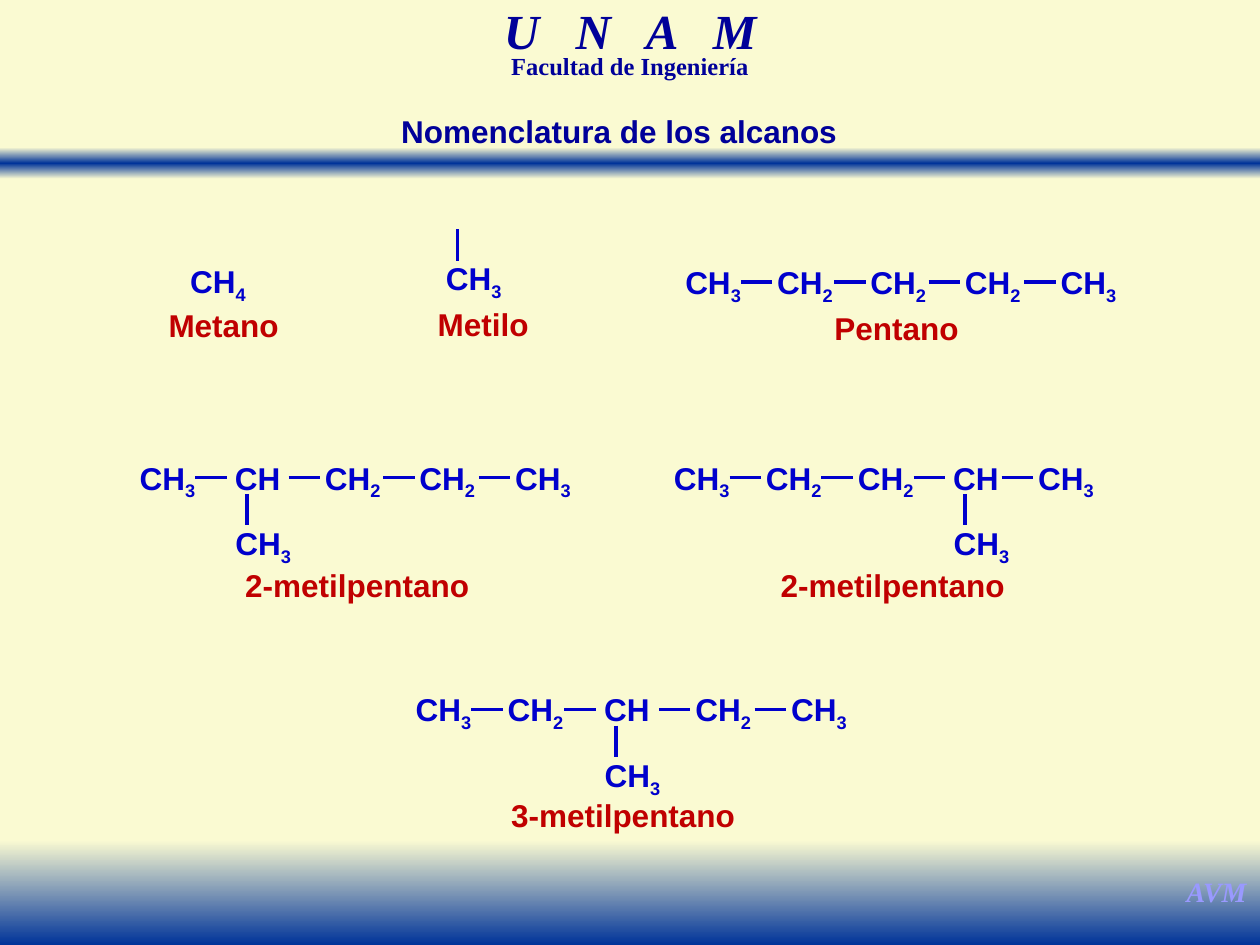
from copy import deepcopy

from lxml import etree
from pptx import Presentation
from pptx.dml.color import RGBColor
from pptx.enum.shapes import MSO_CONNECTOR, MSO_SHAPE
from pptx.enum.text import PP_ALIGN
from pptx.oxml.ns import qn
from pptx.util import Inches, Pt

RECTANGLE = MSO_SHAPE.RECTANGLE
STRAIGHT = MSO_CONNECTOR.STRAIGHT
CENTER = PP_ALIGN.CENTER

COLORS = {"cream": "FAFAD2", "blue": "003399", "navy": "000099",
          "formula": "0000CC", "name": "C00000", "initials": "9999FF"}
SERIF = "Times New Roman"
SANS = "Arial"

BANDS = [
    (1.17, 0.25, ["cream", "blue", "cream"]),
    (6.67, 0.83, ["cream", "blue"]),
]
NAMES = [
    ("Metano", 1.15, 2.39, 1.25),
    ("Metilo", 3.21, 2.38, 1.25),
    ("Pentano", 6.49, 2.41, 1.25),
    ("2-metilpentano", 1.88, 4.45, 1.91),
    ("2-metilpentano", 6.13, 4.45, 1.91),
    ("3-metilpentano", 3.99, 6.28, 1.91),
]
EVEN_BONDS = (0.55, 1.29, 2.04, 2.80)
TIGHT_BONDS = (0.55, 1.28, 2.01, 2.71)
CHAINS = [
    (5.33, 2.04, ["CH3", "CH2", "CH2", "CH2", "CH3"], EVEN_BONDS),
    (1.00, 3.59, ["CH3", "CH", "CH2", "CH2", "CH3"], EVEN_BONDS),
    (5.24, 3.59, ["CH3", "CH2", "CH2", "CH", "CH3"], TIGHT_BONDS),
    (3.19, 5.43, ["CH3", "CH2", "CH", "CH2", "CH3"], EVEN_BONDS),
]
BOND = 0.25
BOND_TO_GROUP = 0.18
BRANCH_DROP = 0.52

prs = Presentation()
prs.slide_width, prs.slide_height = Inches(10), Inches(7.5)
slide = prs.slides.add_slide(prs.slide_layouts[6])
slide.background.fill.solid()
slide.background.fill.fore_color.rgb = RGBColor.from_string(COLORS["cream"])


def add_text(text, left, top, width, height, size=18, font=SANS, color="formula",
             italic=False, wrap=False, insets=(0.1, 0.05, 0.1, 0.05), spacing=None):
    box = slide.shapes.add_textbox(*map(Inches, (left, top, width, height)))
    frame = box.text_frame
    frame.word_wrap = wrap
    (frame.margin_left, frame.margin_top,
     frame.margin_right, frame.margin_bottom) = map(Inches, insets)
    paragraph = frame.paragraphs[0]
    paragraph.alignment = CENTER
    paragraph.line_spacing = spacing
    runs = [(text, {})] if isinstance(text, str) else text
    for part, attributes in runs:
        run = paragraph.add_run()
        run.text = part
        run.font.size, run.font.name = Pt(size), font
        run.font.bold, run.font.italic = True, italic
        run.font.color.rgb = RGBColor.from_string(COLORS[color])
        for key, value in attributes.items():
            run._r.get_or_add_rPr().set(key, value)


def add_band(top, height, stops):
    band = slide.shapes.add_shape(RECTANGLE, 0, Inches(top), prs.slide_width, Inches(height))
    band.shadow.inherit = False
    band.line.fill.background()
    band.fill.gradient()
    band.fill.gradient_angle = 270
    stop_list = band._element.spPr.find(".//" + qn("a:gsLst"))
    while len(stop_list) < len(stops):
        stop_list.append(deepcopy(stop_list[0]))
    for i, (stop, color) in enumerate(zip(band.fill.gradient_stops, stops)):
        stop.position = i / (len(stops) - 1)
        stop.color.rgb = RGBColor.from_string(COLORS[color])


def add_bond(x1, y1, x2, y2):
    bond = slide.shapes.add_connector(STRAIGHT, *map(Inches, (x1, y1, x2, y2)))
    bond.line.color.rgb = RGBColor.from_string(COLORS["formula"])
    bond.line.width = Pt(2)
    etree.SubElement(bond._element.spPr, qn("a:effectLst"))


def add_group(formula, left, top):
    runs = [("CH", {})]
    if formula != "CH":
        runs.append((formula[2:], {"baseline": "-25000"}))
    add_text(runs, left, top, 0.66 if formula != "CH" else 0.57, 0.4)


def add_methyl(left, top):
    add_group("CH3", left, top)
    add_bond(left + 0.2, top - 0.19, left + 0.2, top - 0.19 + BOND)


def add_chain(left, top, groups, bonds):
    offsets = [0] + [bond + BOND_TO_GROUP for bond in bonds]
    for formula, offset in zip(groups, offsets):
        x = left + offset
        if formula == "CH":
            x += 0.03
            add_methyl(x, top + BRANCH_DROP)
        add_group(formula, x, top)
    for bond in bonds:
        add_bond(left + bond, top + 0.2, left + bond + BOND, top + 0.2)


for band in BANDS:
    add_band(*band)

add_text([("U N A ", {"spc": "700"}), ("M", {})], 3.04, 0.08, 3.92, 0.43, size=28,
         font=SERIF, color="navy", italic=True, wrap=True, spacing=0.7)
add_text("Facultad de Ingeniería", 3.21, 0.42, 3.58, 0.26, size=14,
         font=SERIF, color="navy", wrap=True, spacing=0.7)
add_text("AVM", 9.31, 6.89, 0.69, 0.37, size=16, font=SERIF, color="initials", italic=True)
add_text("Nomenclatura de los alcanos", 3.08, 0.84, 3.83, 0.4, color="navy",
         wrap=True, insets=(0.1, 0.05, 0.26, 0.05))

add_group("CH4", 1.4, 2.03)
add_methyl(3.43, 2.01)
for chain in CHAINS:
    add_chain(*chain)
for name, left, top, width in NAMES:
    add_text(name, left, top, width, 0.38, color="name", wrap=True, insets=(0.04,) * 4)

prs.save("out.pptx")
